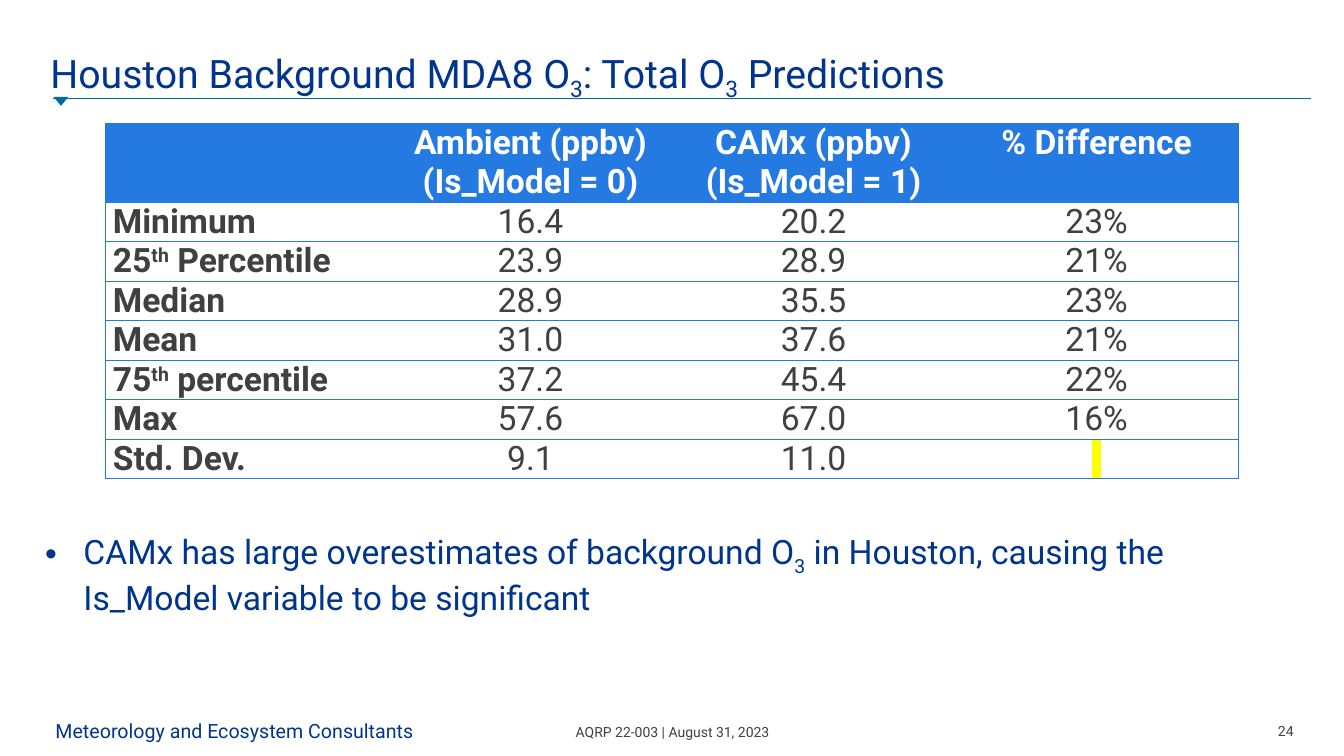
from dataclasses import dataclass

from lxml import etree
from pptx import Presentation
from pptx import util as u
from pptx.dml.color import RGBColor
from pptx.enum import shapes, text
from pptx.oxml import ns

ALIGN = text.PP_ALIGN
ANCHOR = text.MSO_ANCHOR


@dataclass(frozen=True)
class Theme:
    font: str = "Roboto"
    navy: str = "00358E"
    rule: str = "006BA6"
    table: str = "257AE1"
    grey: str = "3F403F"
    white: str = "FFFFFF"
    marker: str = "FFFF00"
    title: int = 28
    body: int = 24
    brand: int = 14
    footer: int = 10
    line: float = 0.75


def child(parent, tag, **attributes):
    return etree.SubElement(parent, ns.qn(tag), attributes)


class SlideBuilder:
    """Places elements on a grid of 133.3 columns by 75 rows."""

    COLUMNS, ROWS = 133.3, 75

    def __init__(self, presentation, theme):
        self.theme = theme
        self.column = presentation.slide_width / self.COLUMNS
        self.row = presentation.slide_height / self.ROWS
        self.slide = presentation.slides.add_slide(presentation.slide_layouts[5])

    def box(self, left, top, width, height):
        return [u.Emu(round(value * unit)) for value, unit in zip(
            (left, top, width, height), (self.column, self.row) * 2)]

    def set_text(self, paragraph, runs, size, color, align=ALIGN.LEFT, bold=False):
        """Runs are strings, or (string, baseline shift in percent) pairs."""
        for item in [runs] if isinstance(runs, str) else runs:
            words, shift = (item, 0) if isinstance(item, str) else item
            run = paragraph.add_run()
            run.text = words
            if shift:
                run._r.get_or_add_rPr().set("baseline", str(shift * 1000))
        paragraph.alignment = align
        font = paragraph.font
        font.name, font.size, font.bold = self.theme.font, u.Pt(size), bold
        font.color.rgb = RGBColor.from_string(color)

    def set_frame(self, frame, margins, anchor=ANCHOR.TOP):
        frame.word_wrap = True
        frame.auto_size = text.MSO_AUTO_SIZE.NONE
        frame.vertical_anchor = anchor
        (frame.margin_left, frame.margin_top,
         frame.margin_right, frame.margin_bottom) = map(u.Inches, margins)

    def title(self, at, runs):
        shape = self.slide.shapes.title
        shape.left, shape.top, shape.width, shape.height = self.box(*at)
        self.set_frame(shape.text_frame, (0, 0, 0, 0), ANCHOR.BOTTOM)
        paragraph = shape.text_frame.paragraphs[0]
        paragraph.line_spacing = 0.8
        self.set_text(paragraph, runs, self.theme.title, self.theme.navy)

    def label(self, at, words, size, color, align=ALIGN.LEFT, inset=0):
        shape = self.slide.shapes.add_textbox(*self.box(*at))
        self.set_frame(shape.text_frame, (inset, 0, 0, 0))
        self.set_text(shape.text_frame.paragraphs[0], words, size, color, align)

    def bullet(self, at, runs):
        shape = self.slide.shapes.add_textbox(*self.box(*at))
        self.set_frame(shape.text_frame, (0.1, 0.05, 0.1, 0.05))
        paragraph = shape.text_frame.paragraphs[0]
        properties = paragraph._p.get_or_add_pPr()
        indent = u.Inches(0.38)
        properties.set("marL", str(indent))
        properties.set("indent", str(-indent))
        child(properties, "a:buFont", typeface="Arial")
        child(properties, "a:buChar", char="•")
        self.set_text(paragraph, runs, self.theme.body, self.theme.navy)

    def rule(self, left, top, width):
        x, y, length, _ = self.box(left, top, width, 0)
        line = self.slide.shapes.add_connector(
            shapes.MSO_CONNECTOR.STRAIGHT, x, y, x + length, y)
        line.line.color.rgb = RGBColor.from_string(self.theme.rule)
        line.line.width = u.Pt(self.theme.line)
        child(line._element.spPr, "a:effectLst")

    def pointer(self, at):
        shape = self.slide.shapes.add_shape(
            shapes.MSO_SHAPE.ISOSCELES_TRIANGLE, *self.box(*at))
        shape.rotation = 180
        shape.shadow.inherit = False
        shape.fill.solid()
        shape.fill.fore_color.rgb = RGBColor.from_string(self.theme.rule)
        shape.line.fill.background()

    def borders(self, cell, visible):
        properties = cell._tc.get_or_add_tcPr()
        for index, side in enumerate("LRTB"):
            line = etree.Element(ns.qn("a:ln" + side), w=str(u.Pt(self.theme.line)))
            if side in visible:
                child(child(line, "a:solidFill"), "a:srgbClr", val=self.theme.table)
            else:
                child(line, "a:noFill")
            properties.insert(index, line)

    def highlight_blank(self, paragraph):
        run = paragraph.add_run()
        run.text = " "
        mark = child(run._r.get_or_add_rPr(), "a:highlight")
        child(mark, "a:srgbClr", val=self.theme.marker)

    def table(self, at, header, body, row_height):
        rows = [header] + body
        last = len(header) - 1
        table = self.slide.shapes.add_table(
            len(rows), len(header), *self.box(*at)).table
        table.first_row = table.horz_banding = False
        for index, row in enumerate(table.rows):
            lines = 2 if index == 0 else 1
            row.height = round(row_height * lines * self.row)
        for r, row in enumerate(rows):
            for c, content in enumerate(row):
                self.fill_cell(table.cell(r, c), content, r == 0, c == 0, c == last)

    def fill_cell(self, cell, content, is_header, is_first, is_last):
        theme = self.theme
        cell.margin_left = cell.margin_right = u.Inches(0.07)
        cell.margin_top = cell.margin_bottom = 0
        if is_last and not is_header:
            cell.vertical_anchor = ANCHOR.MIDDLE
        if is_header:
            cell.fill.solid()
            cell.fill.fore_color.rgb = RGBColor.from_string(theme.table)
        else:
            cell.fill.background()
        self.borders(cell, "TB" + "L" * is_first + "R" * is_last)
        frame = cell.text_frame
        lines = content if is_header else [content]
        for index, line in enumerate(lines):
            paragraph = frame.add_paragraph() if index else frame.paragraphs[0]
            if line is None:
                self.highlight_blank(paragraph)
            self.set_text(paragraph, line or [], theme.body,
                          theme.white if is_header else theme.grey,
                          ALIGN.JUSTIFY if is_first else ALIGN.CENTER,
                          is_header or is_first)


def main():
    presentation = Presentation()
    presentation.slide_width = u.Inches(13.33)
    presentation.slide_height = u.Inches(7.5)
    theme = Theme()
    builder = SlideBuilder(presentation, theme)
    ozone = ("3", -25)

    # Footer
    builder.label((50.8, 71.8, 31.8, 1.7), "AQRP 22-003 | August 31, 2023",
                  theme.footer, theme.grey, ALIGN.CENTER)
    builder.label((126.4, 71.7, 1.9, 1.7), "24",
                  theme.footer, theme.grey, ALIGN.RIGHT)
    builder.label((5, 71.3, 39, 2.4), "Meteorology and Ecosystem Consultants",
                  theme.brand, theme.navy, inset=0.05)

    # Title with its rule
    builder.rule(5.3, 9.8, 124.7)
    builder.pointer((5.3, 9.6, 1.5, 0.9))
    builder.title((5, 2.3, 100, 7.3), [
        "Houston Background MDA8 O", ozone, ": Total O", ozone, " Predictions"])

    # Ozone statistics; None is a blank, highlighted value
    header = [[""], ["Ambient (ppbv)", "(Is_Model = 0)"],
              ["CAMx (ppbv)", "(Is_Model = 1)"], ["% Difference"]]
    statistics = [
        ["Minimum", "16.4", "20.2", "23%"],
        [["25", ("th", 30), " Percentile"], "23.9", "28.9", "21%"],
        ["Median", "28.9", "35.5", "23%"],
        ["Mean", "31.0", "37.6", "21%"],
        [["75", ("th", 30), " percentile"], "37.2", "45.4", "22%"],
        ["Max", "57.6", "67.0", "16%"],
        ["Std. Dev.", "9.1", "11.0", None],
    ]
    builder.table((10.5, 12.2, 112.3, 35.2), header, statistics, row_height=3.91)

    # Finding
    builder.bullet((3.5, 52.2, 126.4, 9.1), [
        "CAMx has large overestimates of background O", ozone,
        " in Houston, causing the Is_Model variable to be significant"])

    presentation.save("out.pptx")


if __name__ == "__main__":
    main()
